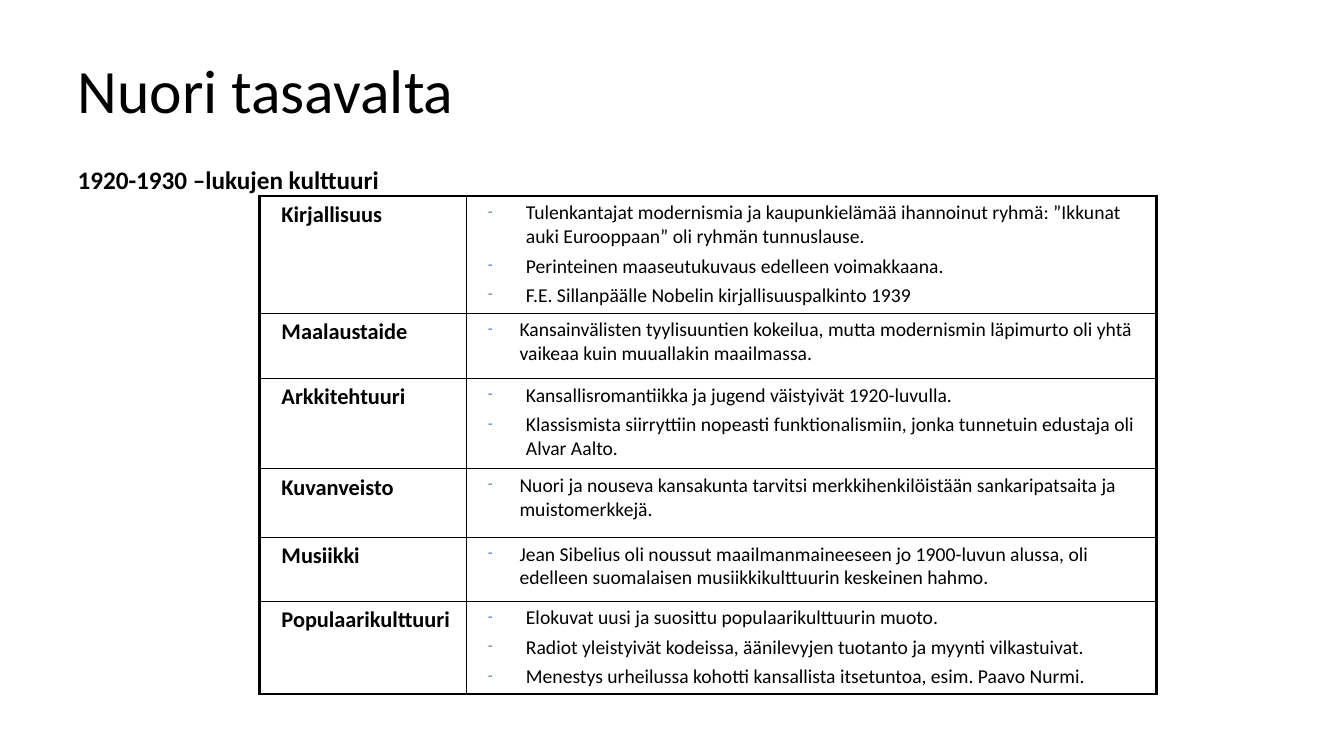
from lxml.etree import SubElement
from pptx import Presentation
from pptx.dml.color import RGBColor
from pptx.enum.text import MSO_ANCHOR, MSO_AUTO_SIZE, PP_ALIGN
from pptx.oxml.ns import qn
from pptx.util import Cm, Pt

COLORS = {"text": "000000", "border": "000000", "bullet": "4472C4"}
FONT = "Calibri"
THIN, THICK = 1, 2.25
COLUMN_WIDTHS = [5.21, 17.4]
CULTURE_ROWS = [
    ("Kirjallisuus", 2.95, [
        "Tulenkantajat modernismia ja kaupunkielämää ihannoinut ryhmä: ”Ikkunat auki Eurooppaan” oli ryhmän tunnuslause.",
        "Perinteinen maaseutukuvaus edelleen voimakkaana.",
        "F.E. Sillanpäälle Nobelin kirjallisuuspalkinto 1939",
    ]),
    ("Maalaustaide", 1.65, [
        "Kansainvälisten tyylisuuntien kokeilua, mutta modernismin läpimurto oli yhtä vaikeaa kuin muuallakin maailmassa.",
    ]),
    ("Arkkitehtuuri", 2.27, [
        "Kansallisromantiikka ja jugend väistyivät 1920-luvulla.",
        "Klassismista siirryttiin nopeasti funktionalismiin, jonka tunnetuin edustaja oli Alvar Aalto.",
    ]),
    ("Kuvanveisto", 1.73, [
        "Nuori ja nouseva kansakunta tarvitsi merkkihenkilöistään sankaripatsaita ja muistomerkkejä.",
    ]),
    ("Musiikki", 1.61, [
        "Jean Sibelius oli noussut maailmanmaineeseen jo 1900-luvun alussa, oli edelleen suomalaisen musiikkikulttuurin keskeinen hahmo.",
    ]),
    ("Populaarikulttuuri", 2.31, [
        "Elokuvat uusi ja suosittu populaarikulttuurin muoto.",
        "Radiot yleistyivät kodeissa, äänilevyjen tuotanto ja myynti vilkastuivat.",
        "Menestys urheilussa kohotti kansallista itsetuntoa, esim. Paavo Nurmi.",
    ]),
]


def write_text(paragraph, text, size, bold=False, before=0, line_spacing=1.0,
               left=0, hanging=0, bullet=None):
    paragraph.alignment = PP_ALIGN.LEFT
    paragraph.line_spacing = line_spacing
    paragraph.space_before = Pt(before)
    run = paragraph.add_run()
    run.text = text
    run.font.name = FONT
    run.font.size = Pt(size)
    run.font.bold = bold
    run.font.color.rgb = RGBColor.from_string(COLORS["text"])
    properties = paragraph._p.get_or_add_pPr()
    properties.set("marL", str(Cm(left)))
    properties.set("indent", str(-Cm(hanging)))
    if bullet:
        color = SubElement(properties, qn("a:buClr"))
        SubElement(color, qn("a:srgbClr"), val=COLORS["bullet"])
        SubElement(properties, qn("a:buSzPct"), val="68000")
        SubElement(properties, qn("a:buChar"), char=bullet)
    else:
        SubElement(properties, qn("a:buNone"))


def place_placeholder(placeholder, box, anchor, text, **text_format):
    left, top, width, height = (Cm(length) for length in box)
    placeholder.left, placeholder.top = left, top
    placeholder.width, placeholder.height = width, height
    frame = placeholder.text_frame
    frame.word_wrap = True
    frame.auto_size = MSO_AUTO_SIZE.NONE
    frame.vertical_anchor = anchor
    write_text(frame.paragraphs[0], text, line_spacing=0.9, **text_format)


def format_cell(cell, borders):
    properties = cell._tc.get_or_add_tcPr()
    for side, width in borders.items():
        line = SubElement(properties, qn(f"a:ln{side}"), w=str(Pt(width)))
        fill = SubElement(line, qn("a:solidFill"))
        SubElement(fill, qn("a:srgbClr"), val=COLORS["border"])
    cell.fill.background()
    cell.vertical_anchor = MSO_ANCHOR.TOP


def add_culture_table(slide, box):
    left, top, width, height = (Cm(length) for length in box)
    shape = slide.shapes.add_table(len(CULTURE_ROWS), 2, left, top, width, height)
    table = shape.table
    table.first_row = False
    table.horz_banding = False
    for column, column_width in zip(table.columns, COLUMN_WIDTHS):
        column.width = Cm(column_width)
    last_row = len(CULTURE_ROWS) - 1
    for index, (label, row_height, points) in enumerate(CULTURE_ROWS):
        table.rows[index].height = Cm(row_height)
        top_width = THICK if index == 0 else THIN
        bottom_width = THICK if index == last_row else THIN
        label_cell, points_cell = table.cell(index, 0), table.cell(index, 1)
        format_cell(label_cell, {"L": THICK, "R": THIN, "T": top_width, "B": bottom_width})
        format_cell(points_cell, {"L": THIN, "R": THICK, "T": top_width, "B": bottom_width})
        write_text(label_cell.text_frame.paragraphs[0], label, 16, bold=True,
                   before=4, left=0.3)
        left_indent, hanging = (1.25, 0.95) if len(points) > 1 else (1.09, 0.79)
        frame = points_cell.text_frame
        for number, point in enumerate(points):
            paragraph = frame.add_paragraph() if number else frame.paragraphs[0]
            write_text(paragraph, point, 14, before=4, left=left_indent,
                       hanging=hanging, bullet="-")


def build_culture_slide(presentation):
    slide = presentation.slides.add_slide(presentation.slide_layouts[1])
    title, body = slide.placeholders
    place_placeholder(title, (1.7, 0.76, 30.48, 3.18), MSO_ANCHOR.MIDDLE,
                      "Nuori tasavalta", size=44)
    place_placeholder(body, (1.7, 4.11, 14.96, 12.57), MSO_ANCHOR.TOP,
                      "1920-1930 –lukujen kulttuuri", size=18, bold=True,
                      before=10, left=0.64, hanging=0.64)
    table_height = sum(row_height for _, row_height, _ in CULTURE_ROWS)
    add_culture_table(slide, (6.54, 4.94, sum(COLUMN_WIDTHS), table_height))


def main():
    presentation = Presentation()
    presentation.slide_width = Cm(33.87)
    presentation.slide_height = Cm(19.05)
    build_culture_slide(presentation)
    presentation.save("out.pptx")


if __name__ == "__main__":
    main()
